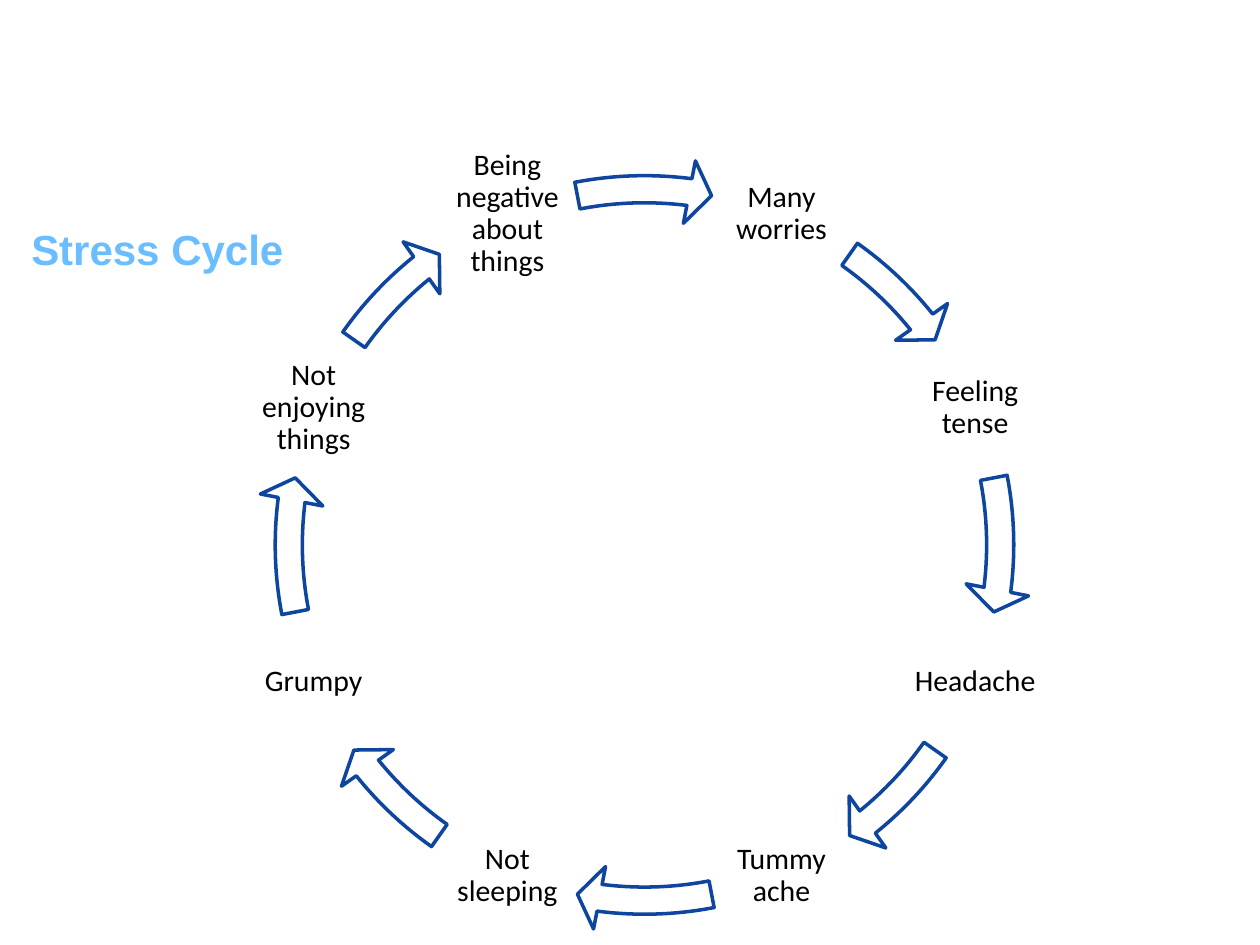
from math import cos, radians, sin

from pptx import Presentation
from pptx.dml.color import RGBColor
from pptx.enum.shapes import MSO_SHAPE
from pptx.enum.text import MSO_ANCHOR, MSO_AUTO_SIZE, PP_ALIGN
from pptx.util import Inches, Pt

WIDTH, HEIGHT = Inches(10), Inches(7.5)
STAGES = [
    "Many worries", "Feeling tense", "Headache", "Tummy ache",
    "Not sleeping", "Grumpy", "Not enjoying things",
    "Being negative about things",
]
ARROW_SPANS = [(305.22, 321.17), (349.13, 367.26)]
ARROW_THICKNESS, ARROW_HEAD, HEAD_ANGLE = 0.035, 0.041, 3.61
DEGREES_TO_ADJUSTMENT = 0.6


def colour(hex_code):
    """Return the colour for a hex string."""
    return RGBColor.from_string(hex_code)


def add_text(shapes, box, text, *, font, size, fill, bold=False, align=PP_ALIGN.LEFT,
             anchor=MSO_ANCHOR.TOP, inset=None, spacing=None, after=None, grow=False):
    """Add a wrapped text box in the given format."""
    frame = shapes.add_textbox(*box).text_frame
    frame.word_wrap = True
    frame.vertical_anchor = anchor
    frame.auto_size = MSO_AUTO_SIZE.SHAPE_TO_FIT_TEXT if grow else MSO_AUTO_SIZE.NONE
    if inset is not None:
        frame.margin_left = frame.margin_right = inset
        frame.margin_top = frame.margin_bottom = inset
    paragraph = frame.paragraphs[0]
    paragraph.alignment = align
    paragraph.line_spacing = spacing
    paragraph.space_after = after
    run = paragraph.add_run()
    run.text = text
    run.font.name, run.font.size, run.font.bold = font, Pt(size), bold
    run.font.color.rgb = colour(fill)


def add_arrow(shapes, box, start, end):
    """Add a curved arrow running clockwise between two angles."""
    arrow = shapes.add_shape(MSO_SHAPE.CIRCULAR_ARROW, *box)
    arrow.shadow.inherit = False
    arrow.fill.solid()
    arrow.fill.fore_color.rgb = colour("FFFFFF")
    arrow.line.color.rgb = colour("0E459F")
    arrow.line.width = Pt(2)
    angles = [angle * DEGREES_TO_ADJUSTMENT for angle in (HEAD_ANGLE, end % 360, start % 360)]
    for index, value in enumerate([ARROW_THICKNESS, *angles, ARROW_HEAD]):
        arrow.adjustments[index] = value


def add_title(slide, box):
    """Place the slide title in its box."""
    add_text(slide.shapes, box, "Stress Cycle", font="Arial", size=24, fill="6ABDFF",
             bold=True, after=Pt(2.5), grow=True)


def add_cycle(slide, box, stages):
    """Place the stages evenly round a ring with an arrow after each."""
    left, top, width, height = box
    step = 360 / len(stages)
    radius = width * 0.462
    label_side = int(width * 0.179)
    shapes = slide.shapes.add_group_shape().shapes
    for index, stage in enumerate(stages):
        angle = radians((index + 0.5) * step - 90)
        label_left = int(left + width / 2 + radius * cos(angle) - label_side / 2)
        label_top = int(top + height / 2 + radius * sin(angle) - label_side / 2)
        add_text(shapes, (label_left, label_top, label_side, label_side), stage,
                 font="Calibri", size=17, fill="000000", align=PP_ALIGN.CENTER,
                 anchor=MSO_ANCHOR.MIDDLE, inset=Inches(0.02), spacing=0.9)
        turns, pair = divmod(index, len(ARROW_SPANS))
        start, end = ARROW_SPANS[pair]
        turned = turns * len(ARROW_SPANS) * step
        add_arrow(shapes, box, start + turned, end + turned)


def main():
    """Build and save the stress cycle slide."""
    deck = Presentation()
    deck.slide_width, deck.slide_height = WIDTH, HEIGHT
    slide = deck.slides.add_slide(deck.slide_layouts[6])
    add_title(slide, (int(WIDTH * 0.015), int(HEIGHT * 0.23),
                      int(WIDTH * 0.89), int(HEIGHT * 0.067)))
    ring = int(HEIGHT * 0.82)
    add_cycle(slide, (int(WIDTH * 0.204), int(HEIGHT / 6), ring, ring), STAGES)
    deck.save("out.pptx")


if __name__ == "__main__":
    main()
